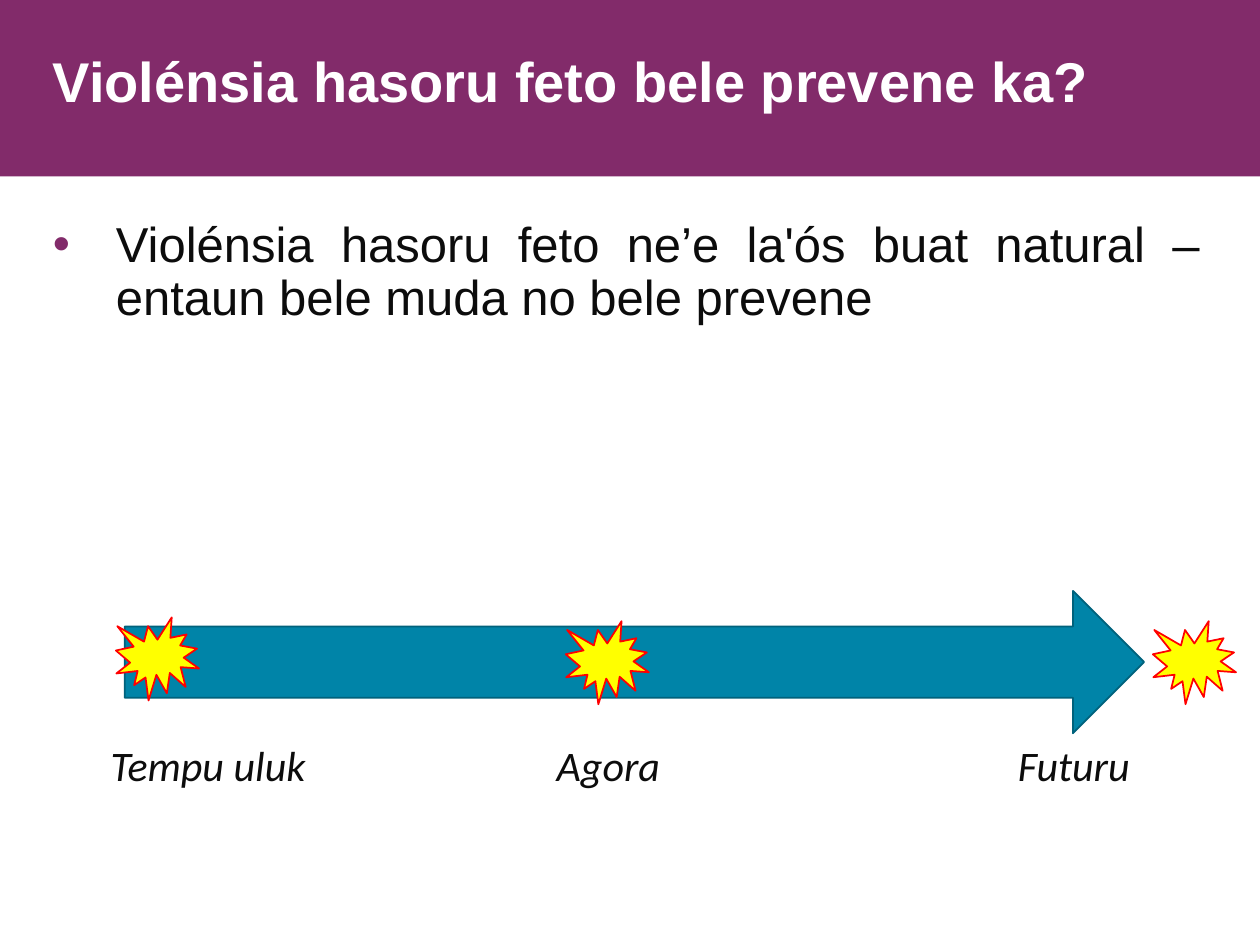
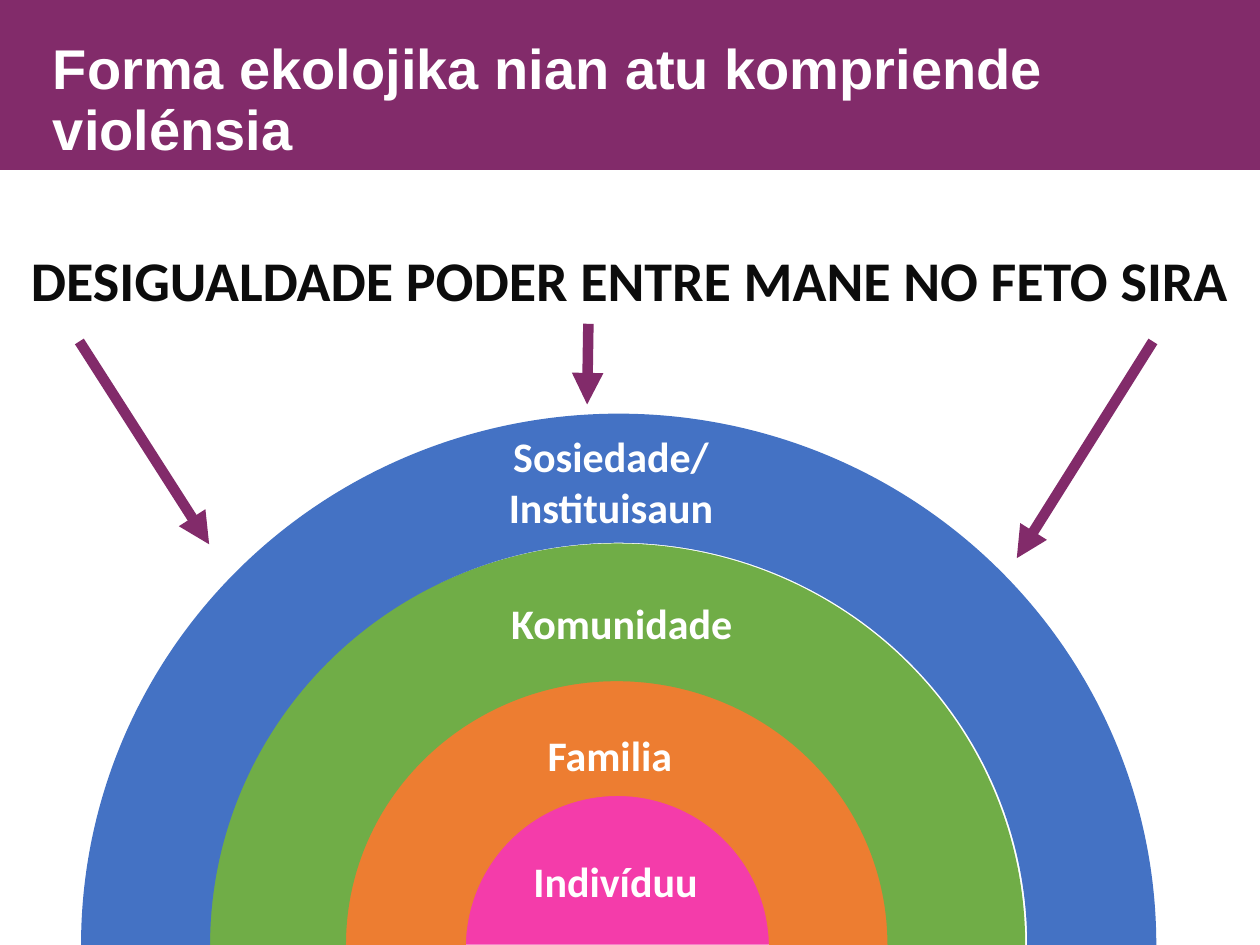
from lxml import etree
from pptx import Presentation
from pptx.dml.color import RGBColor
from pptx.enum.shapes import MSO_CONNECTOR, MSO_SHAPE
from pptx.enum.text import MSO_ANCHOR, MSO_AUTO_SIZE, PP_ALIGN
from pptx.oxml.ns import qn
from pptx.util import Inches, Pt

LEFT, CENTER, JUSTIFY = PP_ALIGN.LEFT, PP_ALIGN.CENTER, PP_ALIGN.JUSTIFY
RECTANGLE, ARROW = MSO_SHAPE.RECTANGLE, MSO_SHAPE.RIGHT_ARROW
BURST, PIE, ARC = MSO_SHAPE.EXPLOSION1, MSO_SHAPE.CHORD, MSO_SHAPE.BLOCK_ARC
PIE = MSO_SHAPE.PIE
STRAIGHT = MSO_CONNECTOR.STRAIGHT
TOP, NO_AUTOFIT = MSO_ANCHOR.TOP, MSO_AUTO_SIZE.NONE

PURPLE, WHITE, INK = "822B6A", "FFFFFF", "0C0C0C"
TEAL, DARK_TEAL = "0084A8", "00627C"
YELLOW, RED = "FFFF00", "FF0000"
PINK, ORANGE, GREEN, BLUE = "F43CAA", "ED7D31", "70AD47", "4472C4"
HALF_TURN = 108  # 180 degrees as an adjustment value


def color(hex_code):
    return RGBColor.from_string(hex_code)


def place(shape, left, top, width, height):
    shape.left, shape.top = Inches(left), Inches(top)
    shape.width, shape.height = Inches(width), Inches(height)


def add_figure(slide, kind, frame, fill, line=None):
    shape = slide.shapes.add_shape(kind, *map(Inches, frame))
    shape.shadow.inherit = False
    shape.fill.solid()
    shape.fill.fore_color.rgb = color(fill)
    if line:
        shape.line.color.rgb = color(line)
        shape.line.width = Pt(1)
    else:
        shape.line.fill.background()
    return shape


def write(para, text, size, ink, font="Calibri", bold=False, italic=False, align=LEFT):
    para.alignment = align
    span = para.add_run()
    span.text = text
    span.font.name, span.font.size = font, Pt(size)
    span.font.bold, span.font.italic = bold, italic
    span.font.color.rgb = color(ink)


def add_label(slide, frame, lines, ink, **style):
    box = slide.shapes.add_textbox(*map(Inches, frame))
    frame = box.text_frame
    frame.word_wrap = True
    for index, line in enumerate(lines):
        para = frame.add_paragraph() if index else frame.paragraphs[0]
        write(para, line, 24, ink, **style)


def fill_placeholder(holder, frame, text, size, ink, bold=False, align=LEFT):
    place(holder, *frame)
    text_frame = holder.text_frame
    text_frame.auto_size = NO_AUTOFIT
    text_frame.vertical_anchor = TOP
    para = text_frame.paragraphs[0]
    para.line_spacing, para.space_before = 0.9, Pt(0)
    write(para, text, size, ink, "Arial", bold, align=align)
    return para


def add_title(slide, top, text):
    fill_placeholder(slide.shapes.title, (0.32, top, 9.3, 0.68), text, 32, WHITE, bold=True)


def add_bullet(para, indent):
    properties = para._p.get_or_add_pPr()
    properties.set("marL", str(Inches(indent)))
    properties.set("indent", str(-Inches(indent)))
    bullet_color = etree.SubElement(properties, qn("a:buClr"))
    etree.SubElement(bullet_color, qn("a:srgbClr"), val=PURPLE)
    etree.SubElement(properties, qn("a:buFont"), typeface="Arial")
    etree.SubElement(properties, qn("a:buChar"), char="•")


def add_pointer(slide, start, end):
    pointer = slide.shapes.add_connector(STRAIGHT, *map(Inches, start + end))
    pointer.line.color.rgb = color(PURPLE)
    pointer.line.width = Pt(6)
    etree.SubElement(pointer.line._get_or_add_ln(), qn("a:tailEnd"), type="triangle")
    etree.SubElement(pointer._element.spPr, qn("a:effectLst"))


def add_master_band(deck, slide):
    """Draw the title band and move it behind everything on the master."""
    band = add_figure(slide, RECTANGLE, (0, 0, 10, 1.4), PURPLE)
    deck.slide_master.shapes.element.insert(2, band.element)


def build_prevention(slide):
    add_title(slide, 0.38, "Violénsia hasoru feto bele prevene ka?")
    para = fill_placeholder(
        slide.placeholders[1], (0.32, 1.7, 9.3, 1.37),
        "Violénsia hasoru feto ne’e la'ós buat natural – entaun bele muda no bele prevene",
        28, INK, align=JUSTIFY)
    add_bullet(para, 0.5)
    add_figure(slide, ARROW, (0.99, 4.69, 8.09, 1.13), TEAL, DARK_TEAL)
    moments = [
        ("Tempu uluk", 0.78, 1.79, 0.92, 4.9),
        ("Agora", 4.32, 1.03, 4.49, 4.93),
        ("Futuru", 7.98, 1.1, 9.15, 4.93),
    ]
    for name, left, width, burst_left, burst_top in moments:
        add_figure(slide, BURST, (burst_left, burst_top, 0.66, 0.66), YELLOW, RED)
        add_label(slide, (left, 5.82, width, 0.5), [name], INK, italic=True)


def build_ecology(slide):
    panel = add_figure(slide, RECTANGLE, (0, 1.36, 10, 6.14), WHITE, WHITE)
    panel.text_frame.vertical_anchor = TOP
    panel.text_frame.margin_top = Inches(0.59)
    panel.text_frame.word_wrap = True
    write(panel.text_frame.paragraphs[0], "DESIGUALDADE PODER ENTRE MANE NO FETO SIRA",
          32, INK, bold=True, align=CENTER)
    add_title(slide, 0.28, "Forma ekolojika nian atu kompriende violénsia")

    core = add_figure(slide, PIE, (3.64, 6.26, 2.46, 2.46), PINK, PINK)
    core.adjustments[0], core.adjustments[1] = HALF_TURN, 0
    rings = [
        (ORANGE, (2.74, 5.36, 4.32, 4.32), 0.22),
        (GREEN, (1.66, 4.32, 6.47, 6.35), 0.17),
        (BLUE, (0.65, 3.29, 8.52, 8.42), 0.12),
    ]
    for fill, frame, thickness in rings:
        ring = add_figure(slide, ARC, frame, fill, fill)
        for index, value in enumerate((HALF_TURN, 0, thickness)):
            ring.adjustments[index] = value

    levels = [
        ((3.79, 6.74, 2.19, 0.5), ["Indivíduu"]),
        ((3.85, 5.74, 1.98, 0.5), ["Familia"]),
        ((3.92, 4.69, 2.03, 0.5), ["Komunidade"]),
        ((3.72, 3.37, 2.26, 0.91), ["Sosiedade/", "Instituisaun"]),
    ]
    for frame, lines in levels:
        add_label(slide, frame, lines, WHITE, bold=True, align=CENTER)

    add_pointer(slide, (0.63, 2.71), (1.66, 4.32))
    add_pointer(slide, (9.15, 2.71), (8.07, 4.43))
    add_pointer(slide, (4.67, 2.57), (4.66, 3.21))


def main():
    deck = Presentation()
    deck.slide_width, deck.slide_height = Inches(10), Inches(7.5)
    title_and_content, title_only = deck.slide_layouts[1], deck.slide_layouts[5]
    prevention = deck.slides.add_slide(title_and_content)
    add_master_band(deck, prevention)
    build_prevention(prevention)
    build_ecology(deck.slides.add_slide(title_only))
    deck.save("out.pptx")


if __name__ == "__main__":
    main()
